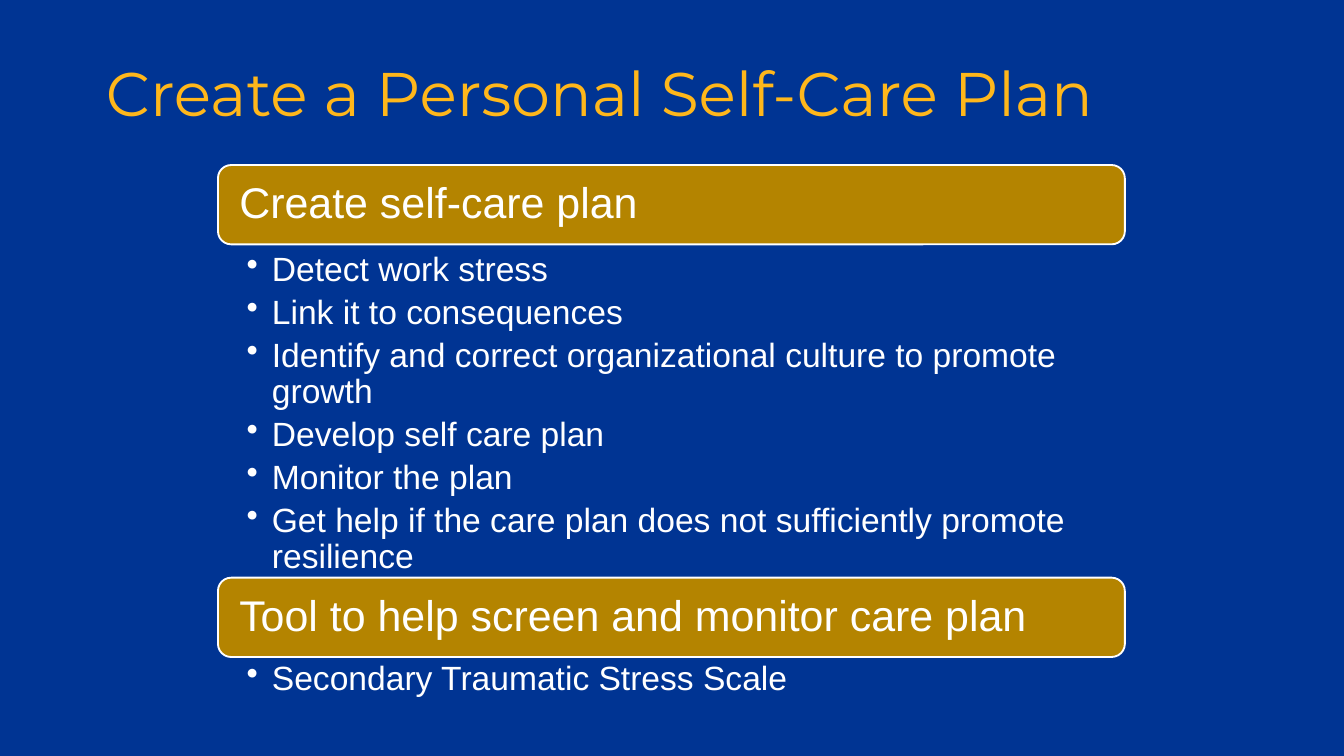
from dataclasses import dataclass

from lxml import etree
from pptx import Presentation
from pptx.dml.color import RGBColor
from pptx.enum.shapes import MSO_SHAPE
from pptx.enum.text import MSO_ANCHOR, PP_ALIGN
from pptx.oxml.ns import qn
from pptx.util import Cm, Pt

ROUNDED = MSO_SHAPE.ROUNDED_RECTANGLE
TOP, MIDDLE = MSO_ANCHOR.TOP, MSO_ANCHOR.MIDDLE
LEFT = PP_ALIGN.LEFT

NAVY, GOLD, OCHRE, WHITE = "003493", "FFB71B", "B48400", "FFFFFF"
SECTION_LEFT, SECTION_WIDTH = 4.12, 17.14
BAR_HEIGHT = 1.5
INDENT = 0.48


@dataclass(frozen=True)
class Section:
    heading: str
    top: float
    steps: tuple[str, ...]
    steps_top: float
    steps_height: float


@dataclass(frozen=True)
class TextStyle:
    font: str
    size: float
    color: str
    space_after: float
    insets: tuple[float, float, float, float]  # left, top, right, bottom
    anchor: MSO_ANCHOR = TOP
    bulleted: bool = False


TITLE = TextStyle("Montserrat", 33, GOLD, 0, (0.25, 0.13, 0.25, 0.13))
HEADING = TextStyle("Arial", 23, WHITE, 8, (0.33, 0.33, 0.33, 0.33), MIDDLE)
STEPS = TextStyle("Arial", 18, WHITE, 3.6, (0.54, 0.08, 0.46, 0.08), bulleted=True)

SECTIONS = (
    Section(
        "Create self-care plan",
        3.12,
        (
            "Detect work stress",
            "Link it to consequences",
            "Identify and correct organizational culture to promote growth",
            "Develop self care plan",
            "Monitor the plan",
            "Get help if the care plan does not sufficiently promote resilience",
        ),
        4.69,
        6.23,
    ),
    Section(
        "Tool to help screen and monitor care plan",
        10.92,
        ("Secondary Traumatic Stress Scale",),
        12.42,
        1.07,
    ),
)


def paint(color_format, color: str) -> None:
    color_format.rgb = RGBColor.from_string(color)


def set_values(target, values: dict) -> None:
    for name, value in values.items():
        setattr(target, name, value)


def add_bullet(paragraph) -> None:
    paragraph.level = 1
    properties = paragraph._p.get_or_add_pPr()
    properties.set("marL", str(Cm(INDENT)))
    properties.set("indent", str(-Cm(INDENT)))
    etree.SubElement(properties, qn("a:buChar")).set("char", "•")


def write(frame, lines: tuple[str, ...], style: TextStyle) -> None:
    left, top, right, bottom = map(Cm, style.insets)
    set_values(frame, {
        "word_wrap": True,
        "vertical_anchor": style.anchor,
        "margin_left": left,
        "margin_top": top,
        "margin_right": right,
        "margin_bottom": bottom,
    })
    for number, line in enumerate(lines):
        paragraph = frame.add_paragraph() if number else frame.paragraphs[0]
        paragraph.text = line
        if style.bulleted:
            add_bullet(paragraph)
        set_values(paragraph, {
            "alignment": LEFT,
            "line_spacing": 0.9,
            "space_after": Pt(style.space_after),
        })
        font = paragraph.runs[0].font
        set_values(font, {"name": style.font, "size": Pt(style.size)})
        paint(font.color, style.color)


def draw_section(slide, section: Section) -> None:
    # Heading bar
    bar = slide.shapes.add_shape(
        ROUNDED, Cm(SECTION_LEFT), Cm(section.top), Cm(SECTION_WIDTH), Cm(BAR_HEIGHT)
    )
    bar.shadow.inherit = False
    bar.fill.solid()
    paint(bar.fill.fore_color, OCHRE)
    paint(bar.line.color, WHITE)
    bar.line.width = Pt(1)
    write(bar.text_frame, (section.heading,), HEADING)

    # Bulleted steps
    steps = slide.shapes.add_textbox(
        Cm(SECTION_LEFT), Cm(section.steps_top), Cm(SECTION_WIDTH), Cm(section.steps_height)
    )
    write(steps.text_frame, section.steps, STEPS)


def main() -> None:
    deck = Presentation()
    deck.slide_width, deck.slide_height = Cm(25.4), Cm(14.29)
    slide = deck.slides.add_slide(deck.slide_layouts[6])
    slide.background.fill.solid()
    paint(slide.background.fill.fore_color, NAVY)

    # Title
    title = slide.shapes.add_textbox(Cm(1.75), Cm(1.07), Cm(21.9), Cm(2.46))
    write(title.text_frame, ("Create a Personal Self-Care Plan",), TITLE)

    # Sections
    for section in SECTIONS:
        draw_section(slide, section)

    deck.save("out.pptx")


if __name__ == "__main__":
    main()
